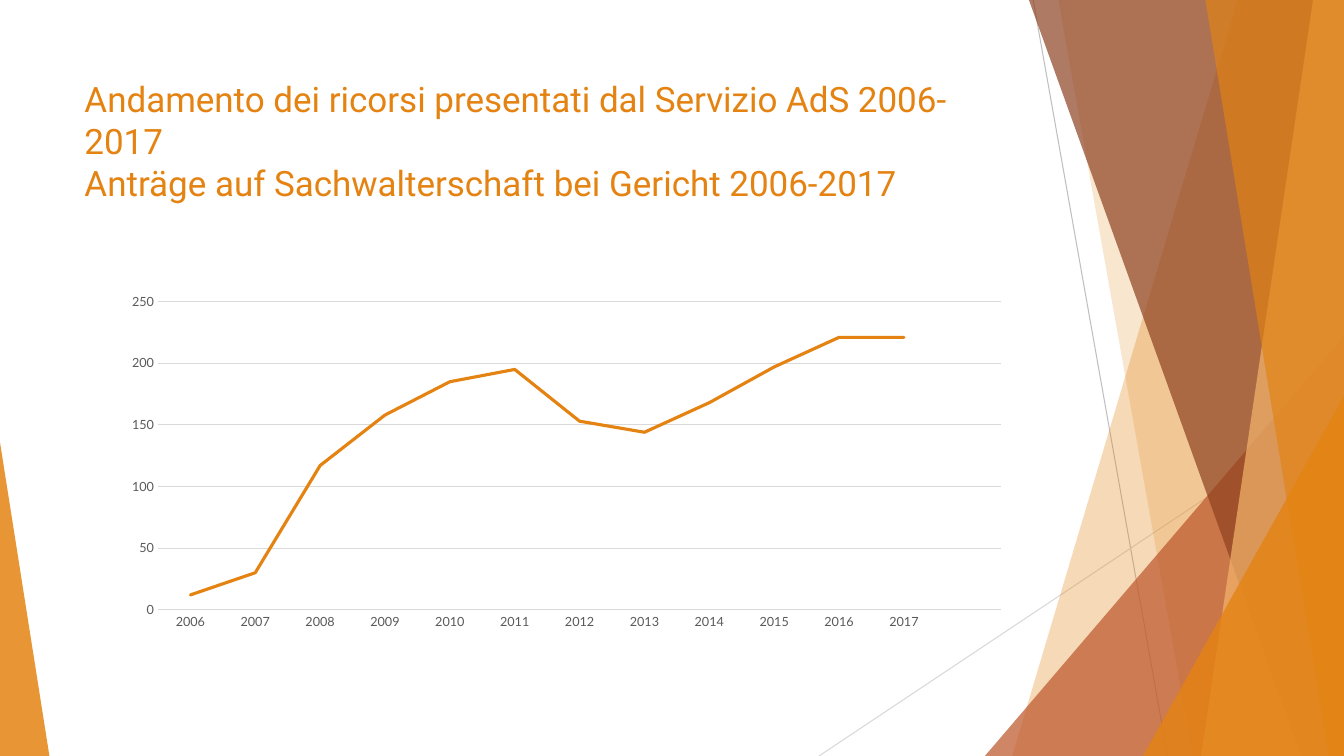
from lxml.etree import SubElement
from pptx import Presentation
from pptx.chart.data import CategoryChartData
from pptx.dml.color import RGBColor
from pptx.enum.chart import XL_CHART_TYPE, XL_TICK_MARK
from pptx.enum.shapes import MSO_CONNECTOR, MSO_SHAPE
from pptx.enum.text import MSO_ANCHOR
from pptx.oxml import parse_xml
from pptx.oxml.ns import nsdecls, qn
from pptx.util import Pt

WIDTH, HEIGHT = 960, 540
COLORS = {
    "orange": "E48312",
    "rust": "BD582C",
    "brown": "8E4221",
    "peach": "F3B56C",
    "silver": "BFBFBF",
    "grid": "D9D9D9",
    "label": "595959",
}
TITLE_LINES = [
    "Andamento dei ricorsi presentati dal Servizio AdS 2006-2017",
    "Anträge auf Sachwalterschaft bei Gericht 2006-2017",
]
YEARS = [str(year) for year in range(2006, 2018)] + [""]
APPLICATIONS = [12, 30, 117, 158, 185, 195, 153, 144, 168, 197, 221, 221, None]
PLOT_AREA = {"x": 0.088, "y": 0.149, "w": 0.89, "h": 0.721}


class SlideBuilder:
    def __init__(self, page, title_font, chart_font):
        self.page = page
        self.title_font = title_font
        self.chart_font = chart_font

    def color(self, name):
        return RGBColor.from_string(COLORS[name])

    def style_line(self, line, color, width):
        line.color.rgb = self.color(color)
        line.width = Pt(width)

    def style_fill(self, shape, color, opacity):
        shape.shadow.inherit = False
        shape.line.fill.background()
        shape.fill.solid()
        shape.fill.fore_color.rgb = self.color(color)
        tint = shape.fill._xPr.find(".//" + qn("a:srgbClr"))
        SubElement(tint, qn("a:alpha"), val=str(opacity * 1000))

    def line(self, start, end, color):
        points = [Pt(value) for value in (*start, *end)]
        connector = self.page.shapes.add_connector(MSO_CONNECTOR.STRAIGHT, *points)
        self.style_line(connector.line, color, 0.75)
        SubElement(connector._element.spPr, qn("a:effectLst"))

    def facet(self, top, bottom, color, opacity):
        builder = self.page.shapes.build_freeform(Pt(top), 0)
        corners = [(WIDTH, 0), (WIDTH, HEIGHT), (bottom, HEIGHT)]
        builder.add_line_segments([(Pt(x), Pt(y)) for x, y in corners], close=True)
        self.style_fill(builder.convert_to_shape(), color, opacity)

    def triangle(self, left, top, right, apex, color, opacity):
        shape = self.page.shapes.add_shape(
            MSO_SHAPE.ISOSCELES_TRIANGLE,
            Pt(left), Pt(top), Pt(right - left), Pt(HEIGHT - top))
        shape.adjustments[0] = apex
        self.style_fill(shape, color, opacity)

    def title(self, left, top, width, height, lines):
        box = self.page.shapes.add_textbox(Pt(left), Pt(top), Pt(width), Pt(height))
        frame = box.text_frame
        frame.word_wrap = True
        frame.vertical_anchor = MSO_ANCHOR.MIDDLE
        para = frame.paragraphs[0]
        for index, text in enumerate(lines):
            if index:
                para.add_line_break()
            span = para.add_run()
            span.text = text
            span.font.name = self.title_font
            span.font.size = Pt(25)
            span.font.color.rgb = self.color("orange")

    def style_axis(self, axis):
        axis.major_tick_mark = XL_TICK_MARK.NONE
        axis.minor_tick_mark = XL_TICK_MARK.NONE
        font = axis.tick_labels.font
        font.name = self.chart_font
        font.size = Pt(9)
        font.color.rgb = self.color("label")

    def line_chart(self, left, top, width, height, categories, values):
        data = CategoryChartData()
        data.categories = categories
        data.add_series("Series 1", values)
        chart = self.page.shapes.add_chart(
            XL_CHART_TYPE.LINE, Pt(left), Pt(top), Pt(width), Pt(height), data).chart
        chart.has_title = False
        chart.has_legend = False
        chart.font.name = self.chart_font
        chart.font.size = Pt(10)
        chart.plots[0].vary_by_categories = False

        years, counts = chart.category_axis, chart.value_axis
        self.style_axis(years)
        self.style_axis(counts)
        self.style_line(years.format.line, "grid", 0.75)
        counts.format.line.fill.background()
        counts.minimum_scale, counts.maximum_scale, counts.major_unit = 0, 250, 50
        counts.has_major_gridlines = True
        self.style_line(counts.major_gridlines.format.line, "grid", 0.75)

        series = chart.plots[0].series[0]
        series.smooth = False
        self.style_line(series.format.line, "orange", 2.25)
        series.format.line._ln.set("cap", "rnd")
        self.place_plot(chart)

    def place_plot(self, chart):
        area = chart._chartSpace.find(".//" + qn("c:plotArea"))
        for old in area.findall(qn("c:layout")):
            area.remove(old)
        sizes = "".join(f'<c:{key} val="{value}"/>' for key, value in PLOT_AREA.items())
        area.insert(0, parse_xml(
            f'<c:layout {nsdecls("c")}><c:manualLayout><c:layoutTarget val="inner"/>'
            f'<c:xMode val="edge"/><c:yMode val="edge"/>{sizes}'
            '</c:manualLayout></c:layout>'))


def main():
    deck = Presentation()
    deck.slide_width, deck.slide_height = Pt(WIDTH), Pt(HEIGHT)
    page = deck.slides.add_slide(deck.slide_layouts[6])
    slide = SlideBuilder(page, "Roboto", "Lato")

    slide.line((738, 0), (834, HEIGHT), "silver")
    slide.line((WIDTH, 290), (585, HEIGHT), "grid")
    slide.facet(884, 723, "orange", 30)
    slide.facet(756, 852, "orange", 20)
    slide.triangle(703.5, 240, WIDTH, 1, "rust", 72)
    slide.facet(735, 929.5, "brown", 70)
    slide.facet(938, 858, "peach", 70)
    slide.facet(861, 949, "orange", 65)
    slide.triangle(816.5, 283, WIDTH, 1, "orange", 80)
    slide.triangle(0, 316, 35.3, 0, "orange", 85)

    slide.title(53.3, 48.2, 676.8, 103.7, TITLE_LINES)
    slide.line_chart(53.3, 170, 676.8, 305.3, YEARS, APPLICATIONS)
    deck.save("out.pptx")


if __name__ == "__main__":
    main()
